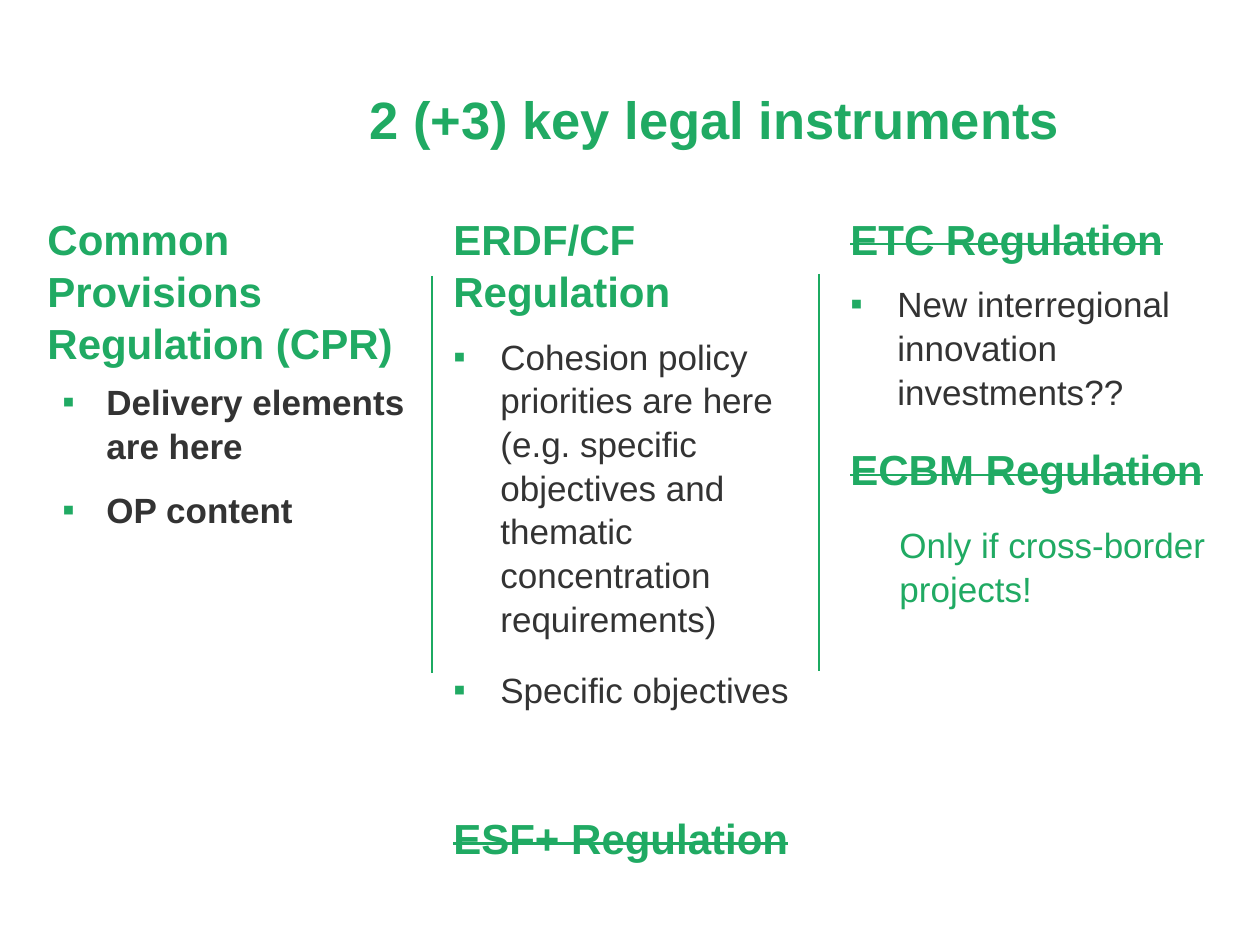
from lxml import etree
from pptx import Presentation
from pptx.dml.color import RGBColor
from pptx.enum.shapes import MSO_CONNECTOR
from pptx.enum.text import MSO_ANCHOR, PP_ALIGN
from pptx.oxml.ns import qn
from pptx.util import Emu, Pt

STRAIGHT = MSO_CONNECTOR.STRAIGHT
TOP = MSO_ANCHOR.TOP
CENTER = PP_ALIGN.CENTER
COLORS = {"green": "20AA63", "divider": "1CAA61", "text": "333333"}
FONT = "Arial"
LINE_SPACING = 1.04
TITLE_ONLY = 5

HEADING = {"size": 24, "color": "green", "bold": True, "before": 5, "after": 6}
STRUCK = {**HEADING, "strike": True}
LOWER_HEADING = {**STRUCK, "after": 12}
BULLET = {"size": 20, "color": "text", "before": 4, "after": 12, "indent": (47, -47)}
BOLD_BULLET = {**BULLET, "bold": True, "before": 0, "indent": (59, -44)}
REMARK = {"size": 20, "color": "green", "before": 4, "after": 12, "indent": (49, 0)}

COLUMNS = [
    ((35, 205, 397, 674), [
        ("Common Provisions Regulation (CPR)", HEADING),
        ("Delivery elements are here", BOLD_BULLET),
        ("OP content", BOLD_BULLET),
    ]),
    ((441, 205, 372, 674), [
        ("ERDF/CF Regulation", HEADING),
        ("Cohesion policy priorities are here (e.g. specific objectives "
         "and thematic concentration requirements)", BULLET),
        ("Specific objectives", BULLET),
        ("ESF+ Regulation", {**LOWER_HEADING, "before": 45}),
    ]),
    ((838, 205, 397, 645), [
        ("ETC Regulation", STRUCK),
        ("New interregional innovation investments??", BULLET),
        ("ECBM Regulation", LOWER_HEADING),
        ("Only if cross-border projects!", REMARK),
    ]),
]
DIVIDERS = [(432, 276, 397), (819, 274, 397)]


def px(length):
    """Turn px into EMU at 126 px to the inch."""
    return Emu(round(length * 914400 / 126))


def rgb(name):
    """Look up a named colour."""
    return RGBColor.from_string(COLORS[name])


def format_paragraph(paragraph, size, color, bold=False, before=0, after=0,
                     indent=(0, 0), strike=False):
    """Set font, spacing, indent, bullet and strike of a paragraph."""
    font = paragraph.font
    font.name, font.size, font.bold = FONT, Pt(size), bold
    font.color.rgb = rgb(color)
    paragraph.line_spacing = LINE_SPACING
    paragraph.space_before, paragraph.space_after = Pt(before), Pt(after)
    left, first = indent
    properties = paragraph._p.get_or_add_pPr()
    properties.set("marL", str(px(left)))
    properties.set("indent", str(px(first)))
    if first < 0:
        add_bullet(properties)
    if strike:
        for run in paragraph.runs:
            run.font._element.set("strike", "sngStrike")


def add_bullet(properties):
    """Give paragraph properties a green square bullet."""
    bullet_color = etree.Element(qn("a:buClr"))
    etree.SubElement(bullet_color, qn("a:srgbClr"), val=COLORS["green"])
    bullet_font = etree.Element(qn("a:buFont"), typeface=FONT)
    bullet = etree.Element(qn("a:buChar"), char="▪")
    defaults = properties.find(qn("a:defRPr"))
    for element in (bullet_color, bullet_font, bullet):
        defaults.addprevious(element)


def place_title(slide, box, wording):
    """Move and format the title placeholder."""
    title = slide.shapes.title
    title.left, title.top, title.width, title.height = map(px, box)
    frame = title.text_frame
    frame.text = wording
    frame.vertical_anchor = TOP
    frame.margin_top = px(9)
    heading = frame.paragraphs[0]
    heading.alignment = CENTER
    format_paragraph(heading, 30, "green", bold=True)


def add_column(slide, box, entries):
    """Write one column of headings and bullets into its box."""
    frame = slide.shapes.add_textbox(*map(px, box)).text_frame
    frame.word_wrap = True
    for index, (wording, style) in enumerate(entries):
        paragraph = frame.add_paragraph() if index else frame.paragraphs[0]
        paragraph.add_run().text = wording
        format_paragraph(paragraph, **style)


def add_divider(slide, x, top, height):
    """Draw a vertical rule between two columns."""
    divider = slide.shapes.add_connector(
        STRAIGHT, px(x), px(top), px(x), px(top + height))
    divider.line.color.rgb = rgb("divider")
    divider.line.width = Pt(1)
    etree.SubElement(divider._element.spPr, qn("a:effectLst"))


def main():
    """Build and save the slide."""
    deck = Presentation()
    deck.slide_width, deck.slide_height = px(1260), px(945)
    slide = deck.slides.add_slide(deck.slide_layouts[TITLE_ONLY])
    place_title(slide, (232, 76, 965, 100), "2 (+3) key legal instruments")
    for box, entries in COLUMNS:
        add_column(slide, box, entries)
    for divider in DIVIDERS:
        add_divider(slide, *divider)
    deck.save("out.pptx")


if __name__ == "__main__":
    main()
